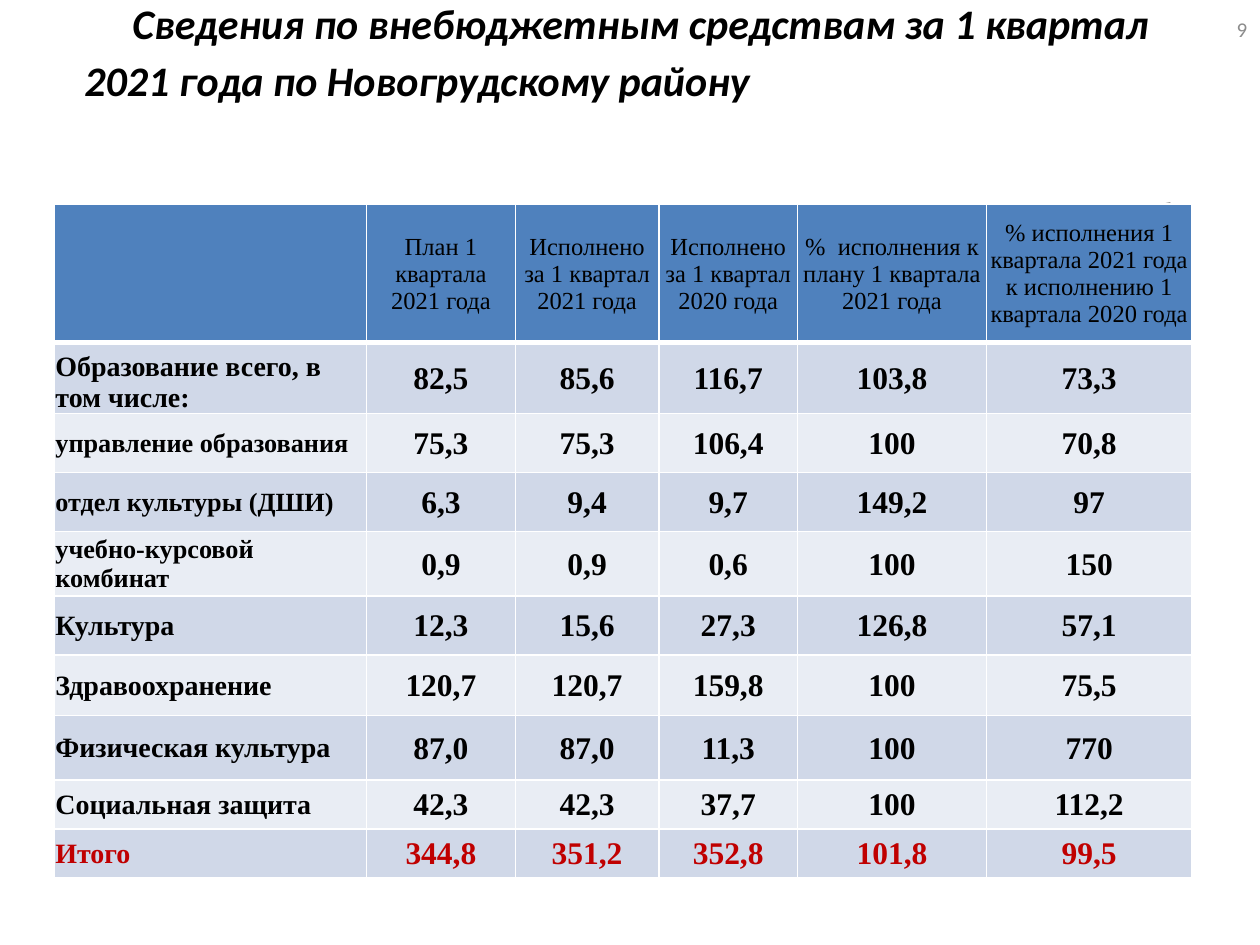
import pptx
import pptx.util
import pptx.dml.color
import pptx.enum.text
import pptx.oxml
import lxml.etree
from pptx.util import Inches

COLORS = {
    "text": "000000", "total": "C00000", "number": "8C8C8C", "border": "FFFFFF",
    "header": "4F81BD", "band_dark": "D0D8E8", "band_light": "E9EDF4",
}
ALIGN = pptx.enum.text.PP_ALIGN
ANCHOR = pptx.enum.text.MSO_ANCHOR


def style_paragraph(paragraph, size, color="text", font="Calibri", bold=False,
                    italic=False, align=ALIGN.LEFT):
    paragraph.alignment = align
    for run in paragraph.runs:
        run.font.name = font
        run.font.size = pptx.util.Pt(size)
        run.font.bold = bold
        run.font.italic = italic
        run.font.color.rgb = pptx.dml.color.RGBColor.from_string(COLORS[color])


def add_text(slide, text, left, top, width, height, anchor=ANCHOR.TOP):
    shape = slide.shapes.add_textbox(Inches(left), Inches(top), Inches(width), Inches(height))
    text_frame = shape.text_frame
    text_frame.word_wrap = True
    text_frame.vertical_anchor = anchor
    text_frame.margin_left = text_frame.margin_right = 0
    text_frame.margin_top = text_frame.margin_bottom = 0
    text_frame.text = text
    return text_frame.paragraphs[0]


presentation = pptx.Presentation()
presentation.slide_width = Inches(10)
presentation.slide_height = Inches(7.5)
slide = presentation.slides.add_slide(presentation.slide_layouts[6])

# Title with a first-line indent
title = add_text(slide, "Сведения по внебюджетным средствам за 1 квартал 2021 года "
                 "по Новогрудскому району", 0.67, -0.07, 8.78, 1)
style_paragraph(title, 24, bold=True, italic=True)
title.line_spacing = pptx.util.Pt(32.5)
title._p.get_or_add_pPr().set("indent", str(Inches(0.38)))

# Unit of measure, partly covered by the table
unit = add_text(slide, "тыс. руб.", 7.4, 1.53, 1.97, 0.3)
style_paragraph(unit, 18, align=ALIGN.RIGHT)

# Table data: label, label size, values
headers = [
    "", "План 1 квартала 2021 года", "Исполнено за 1 квартал 2021 года",
    "Исполнено за 1 квартал 2020 года", "%  исполнения к плану 1 квартала 2021 года",
    "% исполнения 1 квартала 2021 года к исполнению 1 квартала 2020 года",
]
records = [
    ("Образование всего, в том числе:", 16, "82,5", "85,6", "116,7", "103,8", "73,3"),
    ("управление образования", 15, "75,3", "75,3", "106,4", "100", "70,8"),
    ("отдел культуры (ДШИ)", 15, "6,3", "9,4", "9,7", "149,2", "97"),
    ("учебно-курсовой комбинат", 15, "0,9", "0,9", "0,6", "100", "150"),
    ("Культура", 16, "12,3", "15,6", "27,3", "126,8", "57,1"),
    ("Здравоохранение", 16, "120,7", "120,7", "159,8", "100", "75,5"),
    ("Физическая культура", 16, "87,0", "87,0", "11,3", "100", "770"),
    ("Социальная защита", 16, "42,3", "42,3", "37,7", "100", "112,2"),
    ("Итого", 16, "344,8", "351,2", "352,8", "101,8", "99,5"),
]
rows = [headers] + [[label, *values] for label, size, *values in records]
column_widths = [2.48, 1.18, 1.14, 1.1, 1.5, 1.63]
row_heights = [1.1, 0.56, 0.47, 0.47, 0.47, 0.47, 0.48, 0.51, 0.39, 0.39]

# Table
table = slide.shapes.add_table(len(rows), len(headers), Inches(0.43), Inches(1.62),
                               Inches(sum(column_widths)), Inches(sum(row_heights))).table
for column, width in zip(table.columns, column_widths):
    column.width = Inches(width)
for row, height in zip(table.rows, row_heights):
    row.height = Inches(height)

for row_index, values in enumerate(rows):
    is_header = row_index == 0
    is_total = row_index == len(rows) - 1
    fill = "header" if is_header else "band_dark" if row_index % 2 else "band_light"
    for column_index, value in enumerate(values):
        cell = table.cell(row_index, column_index)
        cell.margin_left = cell.margin_right = cell.margin_top = Inches(0.01)
        cell.margin_bottom = 0
        is_label = column_index == 0
        cell.vertical_anchor = ANCHOR.BOTTOM if is_label and row_index == 1 else ANCHOR.MIDDLE

        # Text
        cell.text_frame.text = value
        size = 14 if is_header else records[row_index - 1][1] if is_label else 18
        style_paragraph(cell.text_frame.paragraphs[0], size, "total" if is_total else "text",
                        "Times New Roman", bold=not is_header,
                        align=ALIGN.LEFT if is_label else ALIGN.CENTER)

        # Borders, thicker below the header, then the fill
        properties = cell._tc.get_or_add_tcPr()
        for side in ("lnL", "lnR", "lnT", "lnB"):
            thick = (row_index, side) in ((0, "lnB"), (1, "lnT"))
            line = lxml.etree.SubElement(properties, pptx.oxml.ns.qn(f"a:{side}"),
                                         w=str(pptx.util.Pt(3 if thick else 1)))
            solid = lxml.etree.SubElement(line, pptx.oxml.ns.qn("a:solidFill"))
            lxml.etree.SubElement(solid, pptx.oxml.ns.qn("a:srgbClr"), val=COLORS["border"])
        cell.fill.solid()
        cell.fill.fore_color.rgb = pptx.dml.color.RGBColor.from_string(COLORS[fill])

# Slide number
number = add_text(slide, "9", 7.67, 0.03, 2.23, 0.4, ANCHOR.MIDDLE)
style_paragraph(number, 12, "number", align=ALIGN.RIGHT)

presentation.save("out.pptx")
